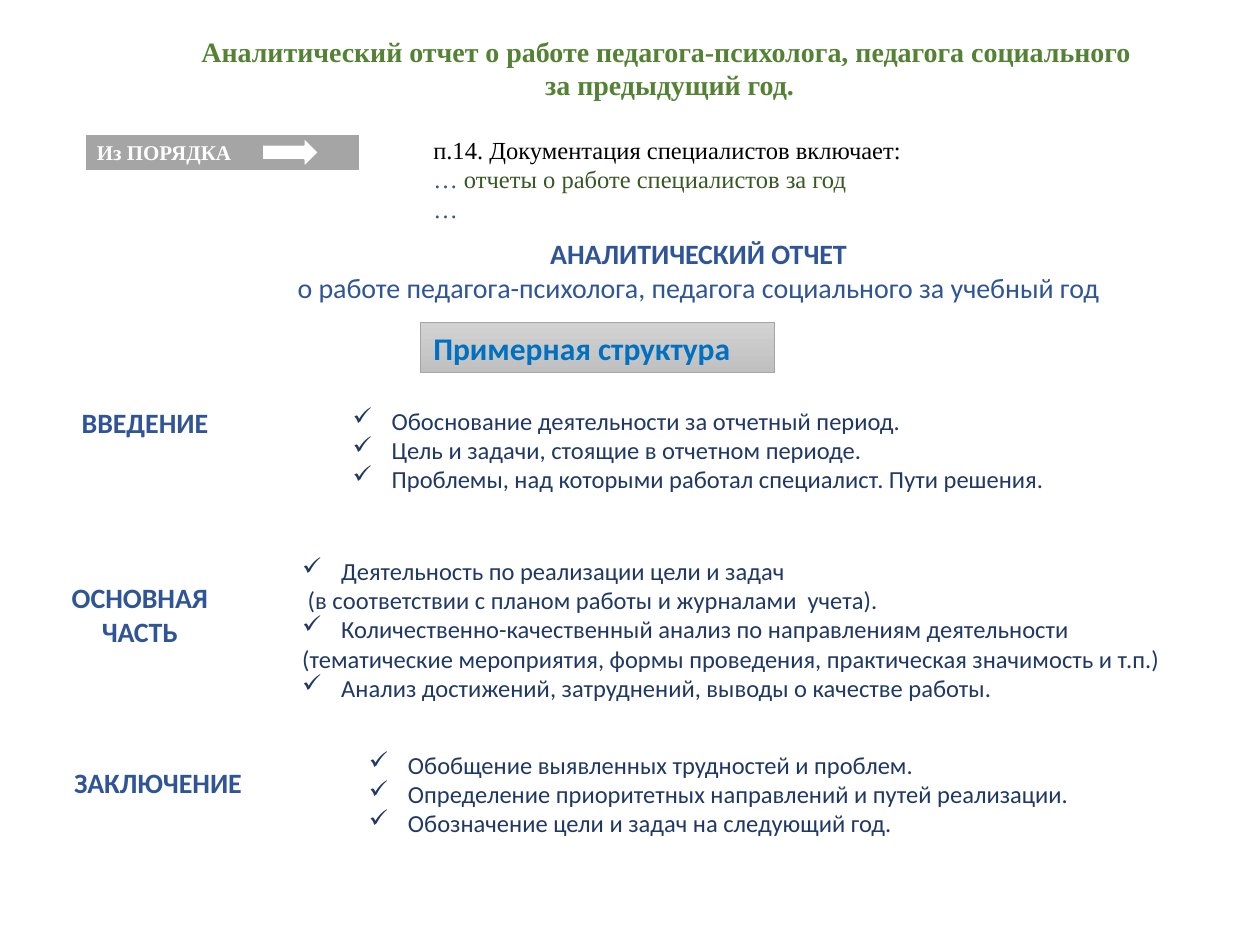
import pptx
import pptx.chart.data
import pptx.dml.color
import pptx.enum.shapes
import pptx.enum.text
import pptx.oxml.ns
import pptx.util
from lxml import etree

Inches = pptx.util.Inches
Pt = pptx.util.Pt
SHAPE = pptx.enum.shapes.MSO_SHAPE
ANCHOR = pptx.enum.text.MSO_ANCHOR
LEFT = pptx.enum.text.PP_ALIGN.LEFT
CENTER = pptx.enum.text.PP_ALIGN.CENTER
CHECK = "✓"
SERIF, SANS = "Times New Roman", "Calibri"
BLUE, NAVY, GREY, WHITE = "2F5597", "203864", "A5A5A5", "FFFFFF"


def color(value):
    return pptx.dml.color.RGBColor.from_string(value)


def write(box, place, paragraphs, style, align=LEFT, anchor=ANCHOR.TOP):
    """Place the box and fill it; a paragraph is a list of (text, changes) spans.

    A first span that is only the check mark makes the paragraph a bullet.
    """
    box.left, box.top, box.width, box.height = map(Inches, place)
    frame = box.text_frame
    frame.word_wrap = True
    frame.auto_size = pptx.enum.text.MSO_AUTO_SIZE.NONE
    frame.vertical_anchor = anchor
    for index, spans in enumerate(paragraphs):
        para = frame.paragraphs[0] if index == 0 else frame.add_paragraph()
        para.alignment = align
        if spans[0] == CHECK:
            spans = spans[1:]
            properties = para._p.get_or_add_pPr()
            properties.set("marL", str(Inches(0.31)))
            properties.set("indent", str(-Inches(0.31)))
            bullet = etree.SubElement(properties, pptx.oxml.ns.qn("a:buChar"))
            bullet.set("char", CHECK)
        for text, changes in spans:
            span = para.add_run()
            span.text = text
            values = {**style, **changes}
            span.font.color.rgb = color(values.pop("color"))
            for name, value in values.items():
                setattr(span.font, name, value)


deck = pptx.Presentation()
deck.slide_width, deck.slide_height = Inches(10), Inches(7.5)
page = deck.slides.add_slide(deck.slide_layouts[5])

# Title
write(page.shapes.title, (1.11, 0.22, 8.41, 0.64),
      [[("Аналитический отчет о работе педагога-психолога, педагога социального ", {})],
       [("за предыдущий год.", {})]],
      {"size": Pt(16), "name": SERIF, "bold": True, "color": "548235"}, CENTER)

# Quotation from the regulation and the report heading
heading = {"size": Pt(16), "name": SANS, "bold": True, "color": BLUE}
write(page.shapes.add_textbox(0, 0, 0, 0), (3.34, 1.02, 5.42, 0.81),
      [[("п.14. Документация специалистов включает:", {"color": "000000"})],
       [("… ", {}), ("отчеты о работе специалистов за год", {"color": "385723"})],
       [("…", {})]],
      {"size": Pt(14), "name": SERIF, "color": BLUE})
write(page.shapes.add_textbox(0, 0, 0, 0), (1.9, 1.83, 7.34, 0.64),
      [[("АНАЛИТИЧЕСКИЙ ОТЧЕТ ", {})],
       [("о работе педагога-психолога, педагога социального за учебный год ",
         {"bold": False})]],
      heading, CENTER)

# Grey plates and the arrow
source_plate = page.shapes.add_shape(SHAPE.RECTANGLE, 0, 0, 0, 0)
structure_plate = page.shapes.add_shape(SHAPE.RECTANGLE, 0, 0, 0, 0)
arrow = page.shapes.add_shape(
    SHAPE.RIGHT_ARROW, Inches(2.08), Inches(1.09), Inches(0.45), Inches(0.24))
for shape, fill, line, width in [(source_plate, GREY, WHITE, 1.5),
                                 (structure_plate, None, GREY, 0.5),
                                 (arrow, WHITE, GREY, 1)]:
    shape.shadow.inherit = False
    shape.line.color.rgb = color(line)
    shape.line.width = Pt(width)
    if fill:
        shape.fill.solid()
        shape.fill.fore_color.rgb = color(fill)
    else:
        shape.fill.gradient()
        shape.fill.gradient_angle = 270
        for stop, shade in zip(shape.fill.gradient_stops, ("D2D2D2", "C0C0C0")):
            stop.color.rgb = color(shade)
write(source_plate, (0.67, 1.06, 2.19, 0.3), [[("Из ПОРЯДКА", {})]],
      {"size": Pt(12), "name": SERIF, "bold": True, "color": WHITE},
      anchor=ANCHOR.MIDDLE)
write(structure_plate, (3.34, 2.56, 2.81, 0.4), [[("Примерная структура", {})]],
      {"size": Pt(18), "name": SANS, "bold": True, "color": "0070C0"},
      anchor=ANCHOR.MIDDLE)

# Report sections: label, its place and alignment, then place and lines of the text
sections = [
    ("ВВЕДЕНИЕ", (0.55, 3.17, 1.4, 0.37), LEFT, (2.7, 3.17, 6.29, 0.81),
     [(CHECK, "Обоснование деятельности за отчетный период."),
      (CHECK, "Цель и задачи, стоящие в отчетном периоде."),
      (CHECK, "Проблемы, над которыми работал специалист. Пути решения.")]),
    ("ОСНОВНАЯ ЧАСТЬ", (0.32, 4.56, 1.58, 0.64), CENTER, (2.3, 4.36, 7.22, 1.28),
     [(CHECK, "Деятельность по реализации цели и задач"),
      ("", " (в соответствии с планом работы и журналами  учета)."),
      (CHECK, "Количественно-качественный анализ по направлениям деятельности"),
      ("", "(тематические мероприятия, формы проведения, "
           "практическая значимость и т.п.)"),
      (CHECK, "Анализ достижений, затруднений, выводы о качестве работы.")]),
    ("ЗАКЛЮЧЕНИЕ", (0.49, 6.03, 1.76, 0.37), LEFT, (2.83, 5.9, 6.16, 0.81),
     [(CHECK, "Обобщение выявленных трудностей и проблем."),
      (CHECK, "Определение приоритетных направлений и путей реализации."),
      (CHECK, "Обозначение цели и задач на следующий год.")]),
]
for label, label_place, align, text_place, lines in sections:
    write(page.shapes.add_textbox(0, 0, 0, 0), label_place, [[(label, {})]],
          heading, align)
    write(page.shapes.add_textbox(0, 0, 0, 0), text_place,
          [[mark, (text, {})] if mark else [(text, {})] for mark, text in lines],
          {"size": Pt(14), "name": SANS, "color": NAVY})

deck.save("out.pptx")
